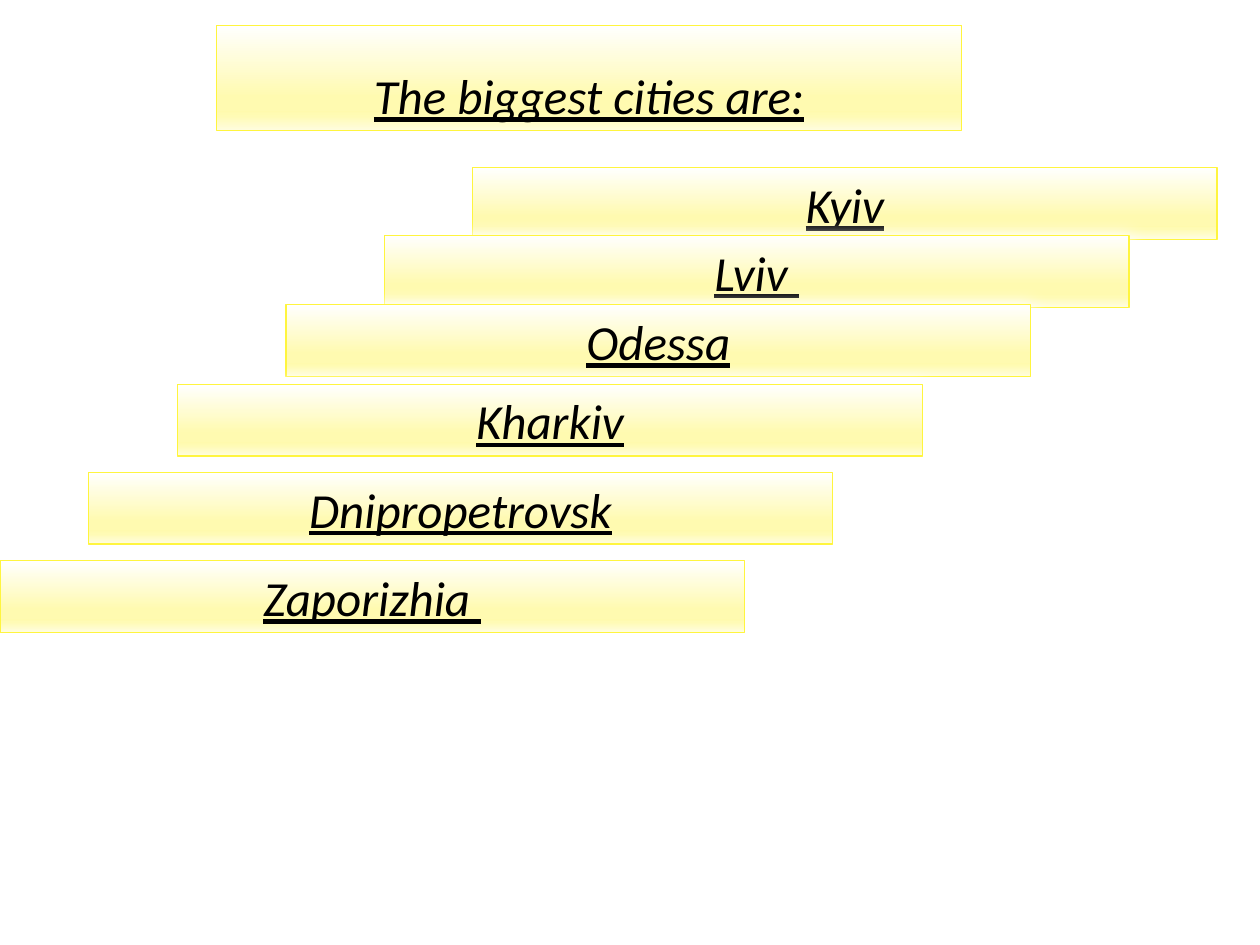
"""Build a slide that lists the biggest cities on a staircase of yellow banners."""
from dataclasses import dataclass

from lxml import etree
from pptx import Presentation
from pptx.dml.color import RGBColor
from pptx.enum import shapes, text
from pptx.oxml.ns import qn
from pptx.util import Pt


@dataclass(frozen=True)
class Theme:
    font: str = "Calibri"
    text_size: float = 28
    text_color: str = "000000"
    line_color: str = "FFF53E"
    line_width: float = 0.75
    halo_color: str = "FFFFFF"
    halo_blur: float = 10
    gradient: tuple[tuple[int, str], ...] = (
        (0, "FFFFFE"),
        (68, "FFFAB0"),
        (81, "FFFAAD"),
        (86, "FFFBB5"),
        (100, "FFFDE0"),
    )


@dataclass(frozen=True)
class Banner:
    label: str
    left: float
    top: float
    width: float = 425.5
    height: float = 41


THEME = Theme()
HEADING = Banner("The biggest cities are:", 123.8, 33.8)
CITIES = (
    Banner("Kyiv", 270, 95.8),
    Banner("Lviv ", 219.6, 134.6),
    Banner("Odessa", 163.4, 174.2),
    Banner("Kharkiv", 101.5, 219.6),
    Banner("Dnipropetrovsk", 50.4, 270),
    Banner("Zaporizhia ", 0, 320.4),
)


def add_color(parent, color: str) -> None:
    etree.SubElement(parent, qn("a:srgbClr"), val=color)


def paint_gradient(shape) -> None:
    shape.fill.gradient()
    shape.fill.gradient_angle = 270
    stops = shape._element.spPr.find(qn("a:gradFill")).find(qn("a:gsLst"))
    for stop in list(stops):
        stops.remove(stop)
    for percent, color in THEME.gradient:
        stop = etree.SubElement(stops, qn("a:gs"), pos=str(percent * 1000))
        add_color(stop, color)


def add_halo(shape) -> None:
    shape.shadow.inherit = False
    effects = shape._element.spPr.find(qn("a:effectLst"))
    halo = etree.SubElement(
        effects, qn("a:outerShdw"), blurRad=str(Pt(THEME.halo_blur)), dist="0", dir="0"
    )
    add_color(halo, THEME.halo_color)


def write_label(shape, label: str) -> None:
    frame = shape.text_frame
    frame.text = label
    frame.word_wrap = True
    frame.auto_size = text.MSO_AUTO_SIZE.SHAPE_TO_FIT_TEXT
    frame.vertical_anchor = text.MSO_ANCHOR.BOTTOM
    paragraph = frame.paragraphs[0]
    paragraph.alignment = text.PP_ALIGN.CENTER
    font = paragraph.runs[0].font
    font.name = THEME.font
    font.size = Pt(THEME.text_size)
    font.color.rgb = RGBColor.from_string(THEME.text_color)
    font.italic = True
    font.underline = True


def style_banner(shape, banner: Banner) -> None:
    shape.left, shape.top = Pt(banner.left), Pt(banner.top)
    shape.width, shape.height = Pt(banner.width), Pt(banner.height)
    paint_gradient(shape)
    shape.line.color.rgb = RGBColor.from_string(THEME.line_color)
    shape.line.width = Pt(THEME.line_width)
    add_halo(shape)
    write_label(shape, banner.label)


def main() -> None:
    presentation = Presentation()
    presentation.slide_width, presentation.slide_height = Pt(720), Pt(540)
    slide = presentation.slides.add_slide(presentation.slide_layouts[5])
    style_banner(slide.shapes.title, HEADING)
    for city in CITIES:
        shape = slide.shapes.add_shape(shapes.MSO_SHAPE.RECTANGLE, 0, 0, 0, 0)
        style_banner(shape, city)
    presentation.save("out.pptx")


if __name__ == "__main__":
    main()
